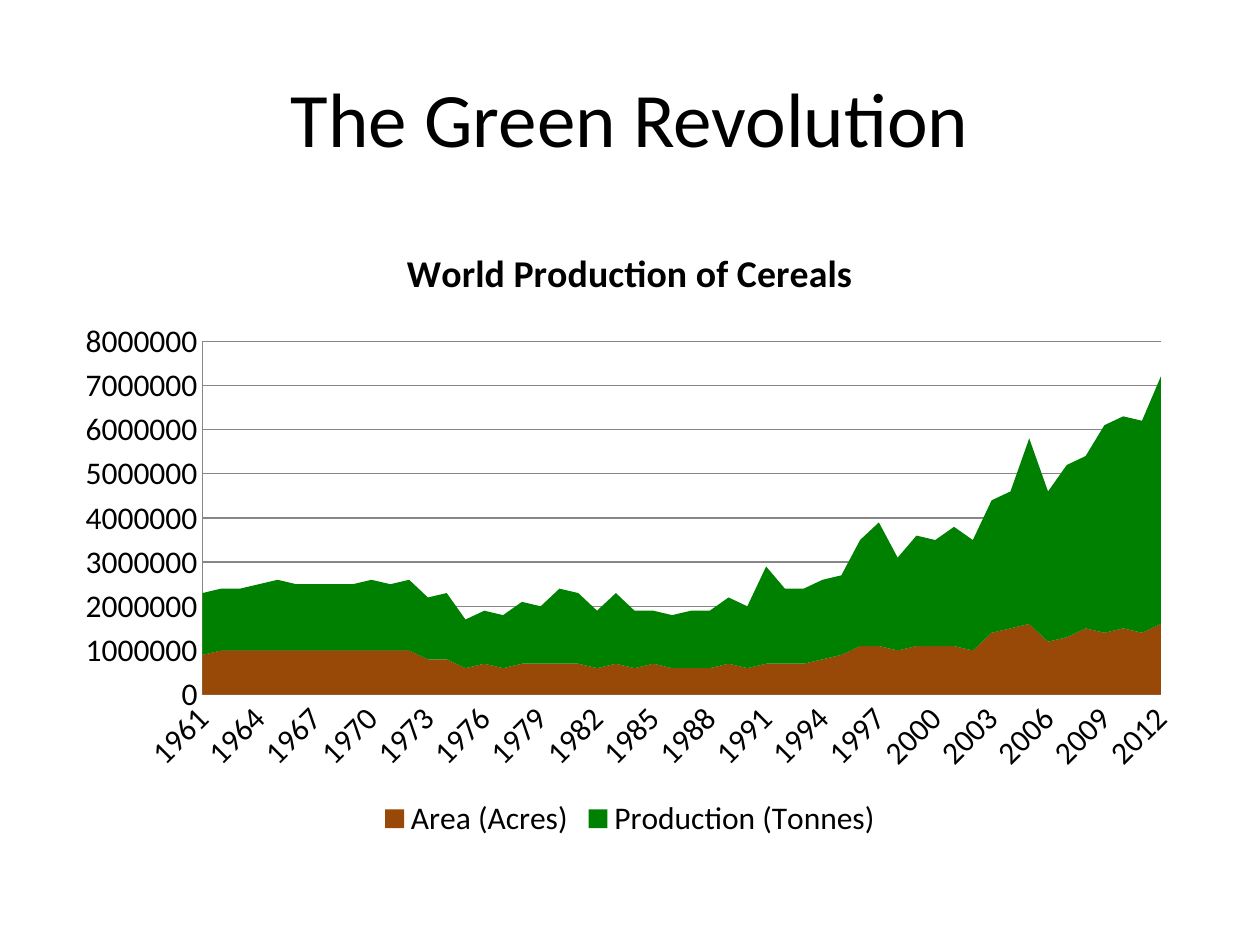
from dataclasses import dataclass

from lxml.etree import Element
from pptx import Presentation
from pptx.chart.data import CategoryChartData
from pptx.dml.color import RGBColor
from pptx.enum.chart import XL_CHART_TYPE, XL_LEGEND_POSITION, XL_TICK_MARK
from pptx.enum.text import MSO_ANCHOR, PP_ALIGN
from pptx.oxml.ns import qn
from pptx.util import Inches, Pt


@dataclass(frozen=True)
class Theme:
    font: str = "Calibri"
    text: str = "000000"
    line: str = "868686"
    area: str = "984807"
    production: str = "008000"
    title_size: float = 44
    chart_title_size: float = 21.6
    chart_size: float = 18


YEARS = range(1961, 2013)
UNIT = 100000
AREA = [
    9, 10, 10, 10, 10, 10, 10, 10, 10, 10, 10, 10, 8,
    8, 6, 7, 6, 7, 7, 7, 7, 6, 7, 6, 7, 6,
    6, 6, 7, 6, 7, 7, 7, 8, 9, 11, 11, 10, 11,
    11, 11, 10, 14, 15, 16, 12, 13, 15, 14, 15, 14, 16,
]
PRODUCTION = [
    14, 14, 14, 15, 16, 15, 15, 15, 15, 16, 15, 16, 14,
    15, 11, 12, 12, 14, 13, 17, 16, 13, 16, 13, 12, 12,
    13, 13, 15, 14, 22, 17, 17, 18, 18, 24, 28, 21, 25,
    24, 27, 25, 30, 31, 42, 34, 39, 39, 47, 48, 48, 56,
]


class Deck:
    def __init__(self, theme):
        self.theme = theme
        self.prs = Presentation()
        self.prs.slide_width, self.prs.slide_height = Inches(10), Inches(7.5)
        self.s = self.prs.slides.add_slide(self.prs.slide_layouts[5])

    def box(self, x, y, w, h):
        width, height = self.prs.slide_width, self.prs.slide_height
        return [int(v) for v in (x * width, y * height, w * width, h * height)]

    def style(self, font, size, bold=False):
        font.name, font.size, font.bold = self.theme.font, Pt(size), bold
        font.color.rgb = RGBColor.from_string(self.theme.text)

    def title(self, text, *share):
        sp = self.s.shapes.title
        sp.left, sp.top, sp.width, sp.height = self.box(*share)
        tf = sp.text_frame
        tf.vertical_anchor = MSO_ANCHOR.MIDDLE
        p = tf.paragraphs[0]
        p.alignment = PP_ALIGN.CENTER
        r = p.add_run()
        r.text = text
        self.style(r.font, self.theme.title_size)

    def area_chart(self, title, categories, series, *share):
        data = CategoryChartData(number_format="General")
        data.categories = categories
        for name, values, color in series:
            data.add_series(name, values)
        chart = self.s.shapes.add_chart(
            XL_CHART_TYPE.AREA_STACKED, *self.box(*share), data).chart
        self.style(chart.font, self.theme.chart_size)
        for ser, (name, values, color) in zip(chart.plots[0].series, series):
            ser.format.fill.solid()
            ser.format.fill.fore_color.rgb = RGBColor.from_string(color)
        chart.has_title = True
        r = chart.chart_title.text_frame.paragraphs[0].add_run()
        r.text = title
        self.style(r.font, self.theme.chart_title_size, True)
        chart.has_legend = True
        chart.legend.position = XL_LEGEND_POSITION.BOTTOM
        chart.legend.include_in_layout = False
        self.style(chart.legend.font, self.theme.chart_size)
        self.axes(chart)

    def axes(self, chart):
        years, amounts = chart.category_axis, chart.value_axis
        years.has_major_gridlines = False
        amounts.has_major_gridlines = True
        for axis in (years, amounts):
            axis.major_tick_mark = axis.minor_tick_mark = XL_TICK_MARK.NONE
            self.style(axis.tick_labels.font, self.theme.chart_size)
        for part in (years, amounts, amounts.major_gridlines):
            part.format.line.width = Pt(0.75)
            part.format.line.color.rgb = RGBColor.from_string(self.theme.line)
        amounts.minimum_scale, amounts.maximum_scale = 0, 80 * UNIT
        amounts.major_unit = 10 * UNIT
        amounts.tick_labels.number_format = "0"
        amounts.tick_labels.number_format_is_linked = False
        root = chart.element
        root.find(".//" + qn("c:crossBetween")).set("val", "midCat")
        cat_ax = root.find(".//" + qn("c:catAx"))
        cat_ax.find(".//" + qn("a:bodyPr")).set("rot", "-2700000")
        skip = Element(qn("c:tickLblSkip"), val="3")
        cat_ax.find(qn("c:noMultiLvlLbl")).addprevious(skip)


def main():
    theme = Theme()
    deck = Deck(theme)
    deck.title("The Green Revolution", 0.05, 0.04, 0.9, 1 / 6)
    series = [
        ("Area (Acres)", [v * UNIT for v in AREA], theme.area),
        ("Production (Tonnes)", [v * UNIT for v in PRODUCTION], theme.production),
    ]
    deck.area_chart("World Production of Cereals", [str(y) for y in YEARS],
                    series, 0.05, 7 / 30, 0.9, 0.66)
    deck.prs.save("out.pptx")


if __name__ == "__main__":
    main()
